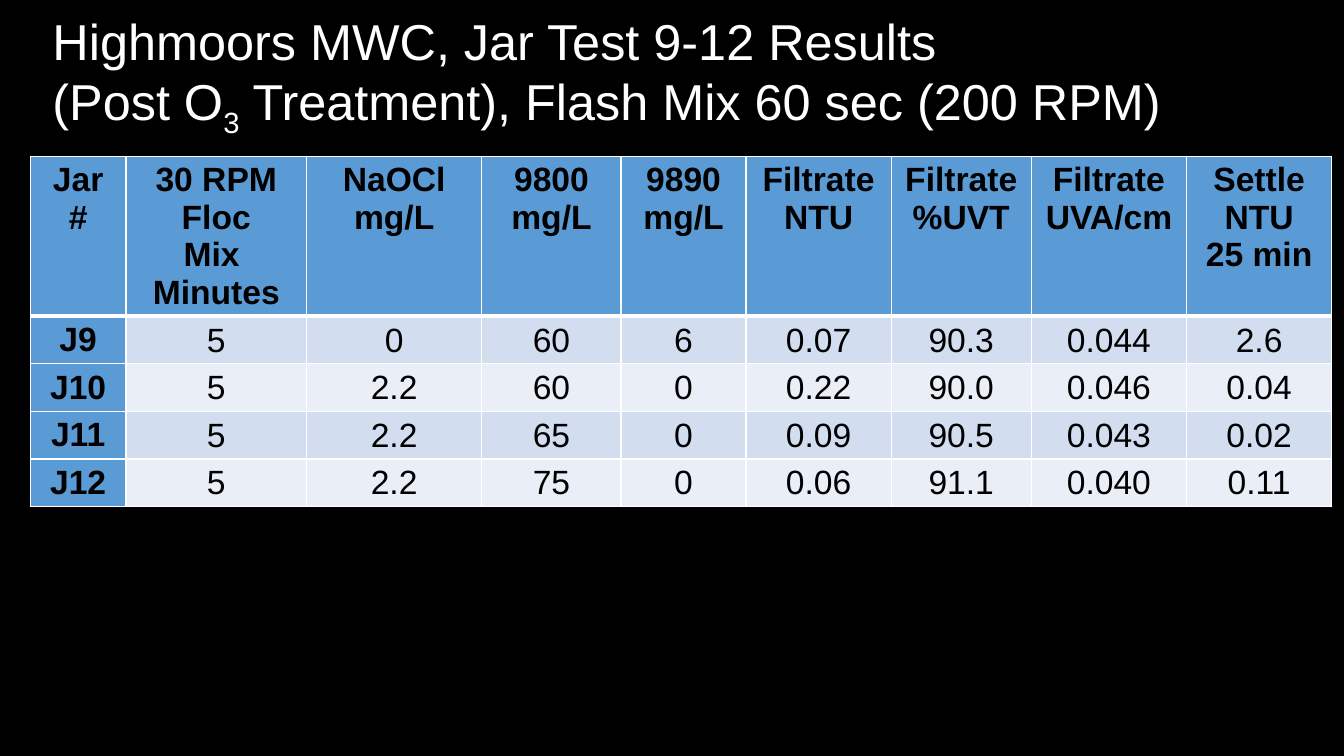
from copy import deepcopy
from dataclasses import dataclass

from lxml import etree
from pptx import Presentation
from pptx import util as u
from pptx.dml.color import RGBColor
from pptx.enum import text
from pptx.oxml.ns import qn

FONT = "Arial"
COLORS = {
    "background": "000000",
    "title": "FFFFFF",
    "ink": "000000",
    "border": "FFFFFF",
    "header": "5B9BD5",
    "odd": "D2DEEF",
    "even": "EAEFF7",
}


@dataclass
class Column:
    heading: str
    width: float
    values: tuple[str, ...]


COLUMNS = [
    Column("Jar\v#", 0.95, ("J9", "J10", "J11", "J12")),
    Column("30 RPM\nFloc\nMix \nMinutes", 1.79, ("5", "5", "5", "5")),
    Column("NaOCl\nmg/L", 1.74, ("0", "2.2", "2.2", "2.2")),
    Column("9800\nmg/L", 1.38, ("60", "60", "65", "75")),
    Column("9890\nmg/L", 1.24, ("6", "0", "0", "0")),
    Column("Filtrate\nNTU", 1.44, ("0.07", "0.22", "0.09", "0.06")),
    Column("Filtrate\n%UVT", 1.39, ("90.3", "90.0", "90.5", "91.1")),
    Column("Filtrate\nUVA/cm", 1.54, ("0.044", "0.046", "0.043", "0.040")),
    Column("Settle\nNTU\n25 min", 1.44, ("2.6", "0.04", "0.02", "0.11")),
]
ROW_HEIGHTS = [0.41, 0.41, 0.41, 0.45, 0.41]


def rgb(name: str) -> RGBColor:
    return RGBColor.from_string(COLORS[name])


def write(p, words: str, *, size: float, color: str, bold: bool = False,
          baseline: int = 0) -> None:
    """Append words to a paragraph; a vertical tab makes a line break."""
    for i, line in enumerate(words.split("\v")):
        if i:
            p.add_line_break()
        r = p.add_run()
        r.text = line
        r.font.name = FONT
        r.font.size = u.Pt(size)
        r.font.bold = bold
        r.font.color.rgb = rgb(color)
        props = r.font._element
        if baseline:
            props.set("baseline", str(baseline * 1000))
        if i:
            r._r.getprevious().append(deepcopy(props))


def set_borders(cell, **widths: float) -> None:
    """Draw solid cell borders, with widths in points by side (L, R, T, B)."""
    tc_pr = cell._tc.get_or_add_tcPr()
    for side in "LRTB":
        ln = etree.SubElement(tc_pr, qn(f"a:ln{side}"),
                              w=str(u.Pt(widths.get(side, 1))))
        fill = etree.SubElement(ln, qn("a:solidFill"))
        etree.SubElement(fill, qn("a:srgbClr"), val=COLORS["border"])


def fill_cell(cell, words: str, row: int, col: int) -> None:
    is_heading = row == 0 or col == 0
    set_borders(cell, B=3 if row == 0 else 1, T=3 if row == 1 else 1)
    cell.fill.solid()
    band = "odd" if row % 2 else "even"
    cell.fill.fore_color.rgb = rgb("header" if is_heading else band)
    if not is_heading:
        cell.vertical_anchor = text.MSO_ANCHOR.MIDDLE
        cell.margin_left = cell.margin_top = cell.margin_right = u.Inches(0.01)
        cell.margin_bottom = 0
    tf = cell.text_frame
    for i, line in enumerate(words.split("\n")):
        p = tf.add_paragraph() if i else tf.paragraphs[0]
        p.alignment = text.PP_ALIGN.CENTER
        write(p, line, size=24, color="ink", bold=is_heading)


def add_title(s) -> None:
    sp = s.shapes.title
    sp.left, sp.top = u.Inches(0.42), u.Inches(0.11)
    sp.width, sp.height = u.Inches(11.99), u.Inches(1.27)
    tf = sp.text_frame
    tf.word_wrap = True
    tf.auto_size = text.MSO_AUTO_SIZE.NONE
    tf.vertical_anchor = text.MSO_ANCHOR.MIDDLE
    p = tf.paragraphs[0]
    p.alignment = text.PP_ALIGN.LEFT
    p.line_spacing = 0.9
    style = {"size": 36, "color": "title"}
    write(p, "Highmoors MWC, Jar Test 9-12 Results\v(Post O", **style)
    write(p, "3", baseline=-25, **style)
    write(p, " Treatment), Flash Mix 60 sec (200 RPM)", **style)


def add_results(s) -> None:
    height = u.Inches(3.7)
    frame = s.shapes.add_table(len(ROW_HEIGHTS), len(COLUMNS), u.Inches(0.3),
                               u.Inches(1.55), u.Inches(12.92), height)
    table = frame.table
    table.first_col = True
    for row, row_height in zip(table.rows, ROW_HEIGHTS):
        row.height = u.Inches(row_height)
    for c, column in enumerate(COLUMNS):
        table.columns[c].width = u.Inches(column.width)
        for r, words in enumerate((column.heading, *column.values)):
            fill_cell(table.cell(r, c), words, r, c)
    frame.height = height


def main() -> None:
    prs = Presentation()
    prs.slide_width, prs.slide_height = u.Inches(13.33), u.Inches(7.5)
    s = prs.slides.add_slide(prs.slide_layouts[5])
    s.background.fill.solid()
    s.background.fill.fore_color.rgb = rgb("background")
    add_title(s)
    add_results(s)
    prs.save("out.pptx")


if __name__ == "__main__":
    main()
